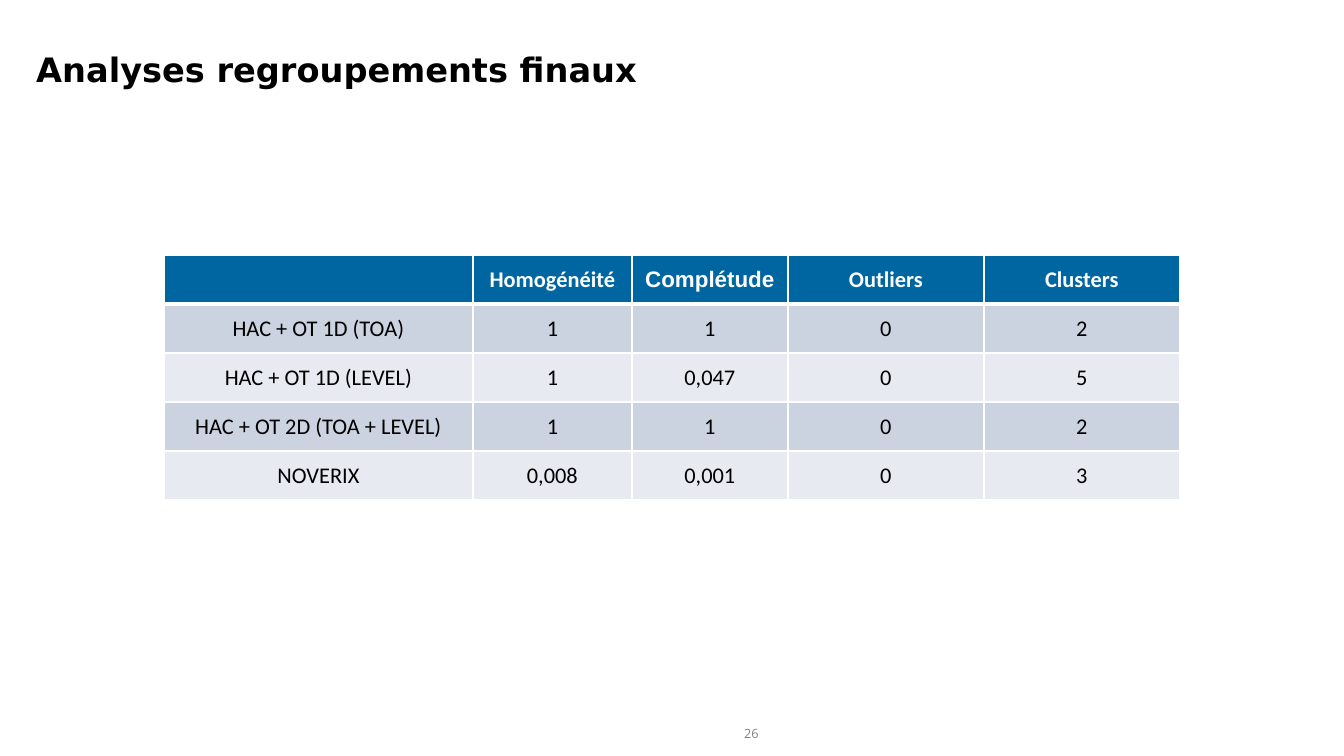
"""Build a slide with a table of final clustering scores."""
from lxml import etree
from pptx import Presentation
from pptx import util as u
from pptx.dml.color import RGBColor
from pptx.enum import text
from pptx.oxml.ns import qn

PX = 914400 / 134.4
COLORS = {
    "white": "FFFFFF",
    "black": "000000",
    "header": "0066A1",
    "band_dark": "CCD3E0",
    "band_light": "E7EAF0",
    "number": "818181",
}
TITLE = {"name": "DejaVu Sans", "size": u.Pt(18), "bold": True}
NUMBER = {"name": "Open Sans", "size": u.Pt(6.8), "bold": False}
HEADER = {"name": "Calibri", "size": u.Pt(12), "bold": True}
BODY = {**HEADER, "bold": False}
CELL = {
    "vertical_anchor": text.MSO_ANCHOR.MIDDLE,
    "margin_left": px_margin if (px_margin := u.Inches(0.01)) else 0,
    "margin_right": px_margin,
    "margin_top": px_margin,
    "margin_bottom": 0,
}
COLUMN_WIDTHS = [309, 159, 156, 196, 196]
ROW_HEIGHT = 49
ROWS = [
    ["", "Homogénéité", "Complétude", "Outliers", "Clusters"],
    ["HAC + OT 1D (TOA)", "1", "1", "0", "2"],
    ["HAC + OT 1D (LEVEL)", "1", "0,047", "0", "5"],
    ["HAC + OT 2D (TOA + LEVEL)", "1", "1", "0", "2"],
    ["NOVERIX", "0,008", "0,001", "0", "3"],
]


def px(length):
    return u.Emu(round(length * PX))


def set_attributes(target, values):
    for name, value in values.items():
        setattr(target, name, value)


def write(frame, words, font, color, align):
    paragraph = frame.paragraphs[0]
    paragraph.alignment = align
    if words:
        run = paragraph.add_run()
        run.text = words
        set_attributes(run.font, font)
        run.font.color.rgb = RGBColor.from_string(COLORS[color])


def add_text(slide, box, words, font, color, align, frame_format):
    shape = slide.shapes.add_textbox(*map(px, box))
    set_attributes(shape.text_frame, {"word_wrap": True, **frame_format})
    write(shape.text_frame, words, font, color, align)


def add_borders(cell, bottom_width):
    properties = cell._tc.get_or_add_tcPr()
    widths = {"a:lnL": 1, "a:lnR": 1, "a:lnT": 1, "a:lnB": bottom_width}
    for position, (tag, width) in enumerate(widths.items()):
        line = etree.Element(qn(tag), w=str(u.Pt(width)))
        fill = etree.SubElement(line, qn("a:solidFill"))
        etree.SubElement(fill, qn("a:srgbClr"), val=COLORS["white"])
        properties.insert(position, line)


def format_cell(cell, words, font, color, fill, bottom_width):
    set_attributes(cell, CELL)
    cell.fill.solid()
    cell.fill.fore_color.rgb = RGBColor.from_string(COLORS[fill])
    write(cell.text_frame, words, font, color, text.PP_ALIGN.CENTER)
    add_borders(cell, bottom_width)


def add_scores(slide, left, top):
    box = (left, top, sum(COLUMN_WIDTHS), ROW_HEIGHT * len(ROWS))
    table = slide.shapes.add_table(
        len(ROWS), len(COLUMN_WIDTHS), *map(px, box)
    ).table
    for column, width in zip(table.columns, COLUMN_WIDTHS):
        column.width = px(width)
    for row_index, row in enumerate(ROWS):
        table.rows[row_index].height = px(ROW_HEIGHT)
        for column_index, words in enumerate(row):
            cell = table.cell(row_index, column_index)
            if row_index == 0:
                name = "Arial" if words == "Complétude" else "Calibri"
                format_cell(cell, words, {**HEADER, "name": name}, "white", "header", 3)
            else:
                fill = "band_dark" if row_index % 2 else "band_light"
                top_font = BODY
                format_cell(cell, words, top_font, "black", fill, 1)
    for column_index in range(len(COLUMN_WIDTHS)):
        line = table.cell(1, column_index)._tc.tcPr.find(qn("a:lnT"))
        line.set("w", str(u.Pt(3)))


def main():
    presentation = Presentation()
    presentation.slide_width, presentation.slide_height = px(1344), px(756)
    slide = presentation.slides.add_slide(presentation.slide_layouts[6])
    add_text(slide, (706, 720, 91, 27), "26", NUMBER, "number",
             text.PP_ALIGN.CENTER,
             {"vertical_anchor": text.MSO_ANCHOR.MIDDLE,
              "margin_top": px(5), "margin_bottom": px(5)})
    add_text(slide, (23, 42, 851, 83), "Analyses regroupements finaux", TITLE,
             "black", text.PP_ALIGN.LEFT,
             {"vertical_anchor": text.MSO_ANCHOR.TOP})
    add_scores(slide, 164, 255)
    presentation.save("out.pptx")


if __name__ == "__main__":
    main()
